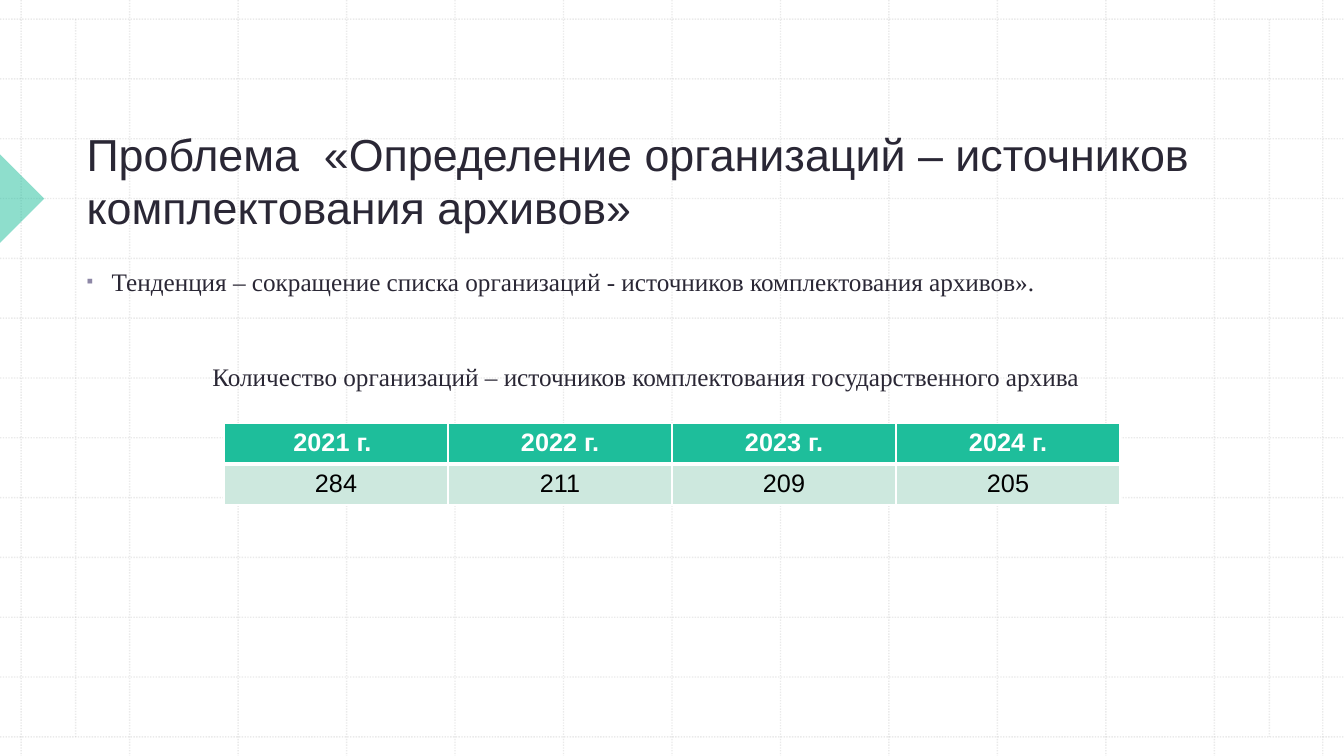
from lxml.etree import SubElement
from pptx import Presentation
from pptx.dml.color import RGBColor
from pptx.enum.dml import MSO_LINE
from pptx.enum.shapes import MSO_CONNECTOR, MSO_SHAPE
from pptx.enum.text import MSO_ANCHOR, PP_ALIGN
from pptx.oxml.ns import qn
from pptx.util import Inches, Pt

TITLE = "Проблема  «Определение организаций – источников комплектования архивов»"
TREND = "Тенденция – сокращение списка организаций - источников комплектования архивов»."
CAPTION = "Количество организаций – источников комплектования государственного архива"
COUNTS = [("2021 г. ", 284), ("2022 г.", 211), ("2023 г.", 209), ("2024 г.", 205)]

W, H = 13.33, 7.5
INK, GREEN, MINT, WHITE, BLACK = "2A2735", "1EBE9B", "CDE8DE", "FFFFFF", "000000"
GRID, BULLET = "BCBCBC", "8D87A6"
STEPS = 12
LEFT, RIGHT, TOP, BOTTOM = 0.21, 13.12, 0.19, 7.31
FRAME_X = (0.75, 12.59)
TEXT_X, TEXT_W = 0.76, 11.29
ROW_H, TABLE_W = 0.405, W * 2 / 3


def rgb(value):
    return RGBColor.from_string(value)


def set_opacity(shape, percent):
    color = shape.element.spPr.find(".//" + qn("a:srgbClr"))
    SubElement(color, qn("a:alpha"), val=str(percent * 1000))


def grid_line(x1, y1, x2, y2):
    line = slide.shapes.add_connector(
        MSO_CONNECTOR.STRAIGHT, *map(Inches, (x1, y1, x2, y2)))
    line.line.color.rgb = rgb(GRID)
    line.line.width = Pt(1)
    line.line.dash_style = MSO_LINE.ROUND_DOT
    set_opacity(line, 30)
    SubElement(line.element.spPr, qn("a:effectLst"))


def text_frame(top, height):
    box = slide.shapes.add_textbox(*map(Inches, (TEXT_X, top, TEXT_W, height)))
    box.text_frame.word_wrap = True
    return box.text_frame


def style(p, size, font, color, align, bold=False):
    p.alignment = align
    for r in p.runs:
        r.font.size, r.font.name, r.font.bold = Pt(size), font, bold
        r.font.color.rgb = rgb(color)


def add_bullet(p):
    pPr = p._p.get_or_add_pPr()
    pPr.set("marL", str(Inches(0.25)))
    pPr.set("indent", str(Inches(-0.25)))
    SubElement(SubElement(pPr, qn("a:buClr")), qn("a:srgbClr"), val=BULLET)
    SubElement(pPr, qn("a:buSzPct"), val="75000")
    SubElement(pPr, qn("a:buFont"), typeface="Arial")
    SubElement(pPr, qn("a:buChar"), char="▪")


def fill_cell(cell, text, fill, color, bold, bottom):
    """Write one cell with white borders; bottom is the lower border in points."""
    cell.text = text
    style(cell.text_frame.paragraphs[0], 18, "Arial", color, PP_ALIGN.CENTER, bold)
    tcPr = cell._tc.get_or_add_tcPr()
    for side, width in (("L", 1), ("R", 1), ("T", 1), ("B", bottom)):
        ln = SubElement(tcPr, qn("a:ln" + side), w=str(Pt(width)))
        SubElement(SubElement(ln, qn("a:solidFill")), qn("a:srgbClr"), val=WHITE)
    cell.fill.solid()
    cell.fill.fore_color.rgb = rgb(fill)


prs = Presentation()
prs.slide_width, prs.slide_height = Inches(W), Inches(H)
slide = prs.slides.add_slide(prs.slide_layouts[6])

for i in range(STEPS + 1):
    x = LEFT + i * (RIGHT - LEFT) / STEPS
    y = TOP + i * (BOTTOM - TOP) / STEPS
    grid_line(x, 0, x, H)
    grid_line(0, y, W, y)
for x in FRAME_X:
    grid_line(x, TOP, x, BOTTOM)

marker = slide.shapes.add_shape(
    MSO_SHAPE.RIGHT_TRIANGLE, *map(Inches, (-0.31, 1.66, 0.62, 0.62)))
marker.rotation = 225
marker.shadow.inherit = False
marker.fill.solid()
marker.fill.fore_color.rgb = rgb(GREEN)
marker.line.fill.background()
set_opacity(marker, 50)

tf = text_frame(0.79, 1.58)
tf.vertical_anchor = MSO_ANCHOR.BOTTOM
tf.text = TITLE
style(tf.paragraphs[0], 32, "Arial", INK, PP_ALIGN.LEFT)

tf = text_frame(2.56, 3.9)
tf.text = TREND + "\n" + CAPTION
trend, caption = tf.paragraphs
for p, align, before in ((trend, PP_ALIGN.JUSTIFY, 10), (caption, PP_ALIGN.CENTER, 44)):
    style(p, 18, "Times New Roman", INK, align)
    p.line_spacing = 1.1
    p.space_before = Pt(before)
add_bullet(trend)

table = slide.shapes.add_table(
    2, len(COUNTS), *map(Inches, ((W - TABLE_W) / 2, 4.2, TABLE_W, 2 * ROW_H))).table
table.first_row = table.horz_banding = False
for col, (year, count) in enumerate(COUNTS):
    fill_cell(table.cell(0, col), year, GREEN, WHITE, True, 3)
    fill_cell(table.cell(1, col), str(count), MINT, BLACK, False, 1)

prs.save("out.pptx")
